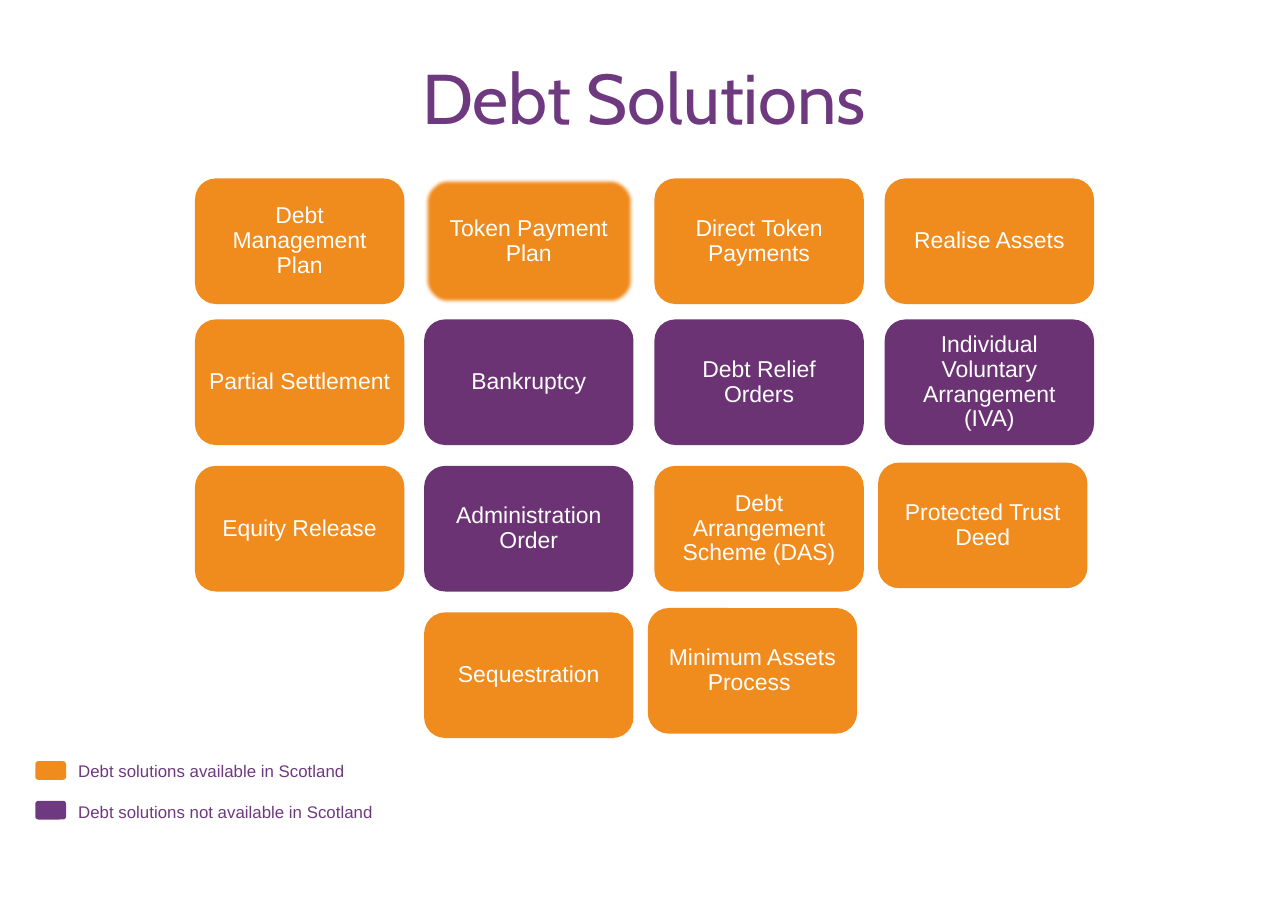
"""Build the Debt Solutions slide: a grid of options and a colour key."""
import pptx
import pptx.dml.color
import pptx.enum.shapes
import pptx.enum.text
import pptx.oxml.ns
import pptx.oxml.xmlchemy
import pptx.util

ORANGE = pptx.dml.color.RGBColor(0xF0, 0x8B, 0x1E)
PURPLE = pptx.dml.color.RGBColor(0x6B, 0x33, 0x74)
VIOLET = pptx.dml.color.RGBColor(0x6F, 0x39, 0x7F)
WHITE = pptx.dml.color.RGBColor(0xFF, 0xFF, 0xFF)
SCALE = 9144
ALIGN = pptx.enum.text.PP_ALIGN
ANCHOR = pptx.enum.text.MSO_ANCHOR

COLS = (177, 385, 594, 803)
ROWS = (162, 290, 423, 556)
TILES = (
    (0, 0, "Debt Management Plan", ORANGE),
    (0, 1, "Token Payment Plan", ORANGE),
    (0, 2, "Direct Token Payments", ORANGE),
    (0, 3, "Realise Assets", ORANGE),
    (1, 0, "Partial Settlement", ORANGE),
    (1, 1, "Bankruptcy", PURPLE),
    (1, 2, "Debt Relief Orders", PURPLE),
    (1, 3, "Individual Voluntary Arrangement (IVA)", PURPLE),
    (2, 0, "Equity Release", ORANGE),
    (2, 1, "Administration Order", PURPLE),
    (2, 2, "Debt Arrangement Scheme (DAS)", ORANGE),
    (2, 3, "Protected Trust Deed", ORANGE),
    (3, 1, "Sequestration", ORANGE),
    (3, 2, "Minimum Assets Process ", ORANGE),
)
SHIFTS = {(2, 3): (-6, -3), (3, 2): (-6, -4)}
SOFT = (0, 1)


def px(*sizes):
    return [pptx.util.Emu(size * SCALE) for size in sizes]


class Page:
    def __init__(self, slide, font):
        self.slide = slide
        self.font = font

    def frame(self, shape, side, anchor):
        frame = shape.text_frame
        frame.word_wrap = True
        frame.auto_size = pptx.enum.text.MSO_AUTO_SIZE.NONE
        frame.vertical_anchor = anchor
        frame.margin_left, frame.margin_right = px(side, side)
        frame.margin_top, frame.margin_bottom = px(6, 6)
        return frame

    def style(self, para, size, color, align, font=None):
        para.alignment = align
        for run in para.runs:
            run.font.name = font or self.font
            run.font.size = pptx.util.Pt(size)
            run.font.color.rgb = color

    def title(self, text, box):
        shape = self.slide.shapes.title
        shape.left, shape.top, shape.width, shape.height = px(*box)
        frame = self.frame(shape, 11, ANCHOR.TOP)
        frame.text = text
        self.style(frame.paragraphs[0], 46, VIOLET, ALIGN.CENTER, "Cabin")

    def block(self, box, color):
        kind = pptx.enum.shapes.MSO_SHAPE.ROUNDED_RECTANGLE
        shape = self.slide.shapes.add_shape(kind, *px(*box))
        shape.shadow.inherit = False
        shape.fill.solid()
        shape.fill.fore_color.rgb = color
        shape.line.fill.background()
        return shape

    def tile(self, text, box, color):
        shape = self.block(box, color)
        frame = self.frame(shape, 6, ANCHOR.MIDDLE)
        frame.text = text
        para = frame.paragraphs[0]
        para.line_spacing = 0.9
        self.style(para, 15, WHITE, ALIGN.CENTER)
        return shape

    def soften(self, shape, points):
        edge = pptx.oxml.xmlchemy.OxmlElement("a:softEdge")
        edge.set("rad", str(pptx.util.Pt(points)))
        shape._element.spPr.find(pptx.oxml.ns.qn("a:effectLst")).append(edge)

    def labels(self, lines, box):
        shape = self.slide.shapes.add_textbox(*px(*box))
        frame = self.frame(shape, 11, ANCHOR.TOP)
        frame.text = "\n".join(lines)
        for para in frame.paragraphs:
            self.style(para, 11, VIOLET, ALIGN.LEFT)
        for para in frame.paragraphs[1:]:
            para.space_before = pptx.util.Pt(13)


def main():
    deck = pptx.Presentation()
    deck.slide_width, deck.slide_height = px(1169, 827)
    page = Page(deck.slides.add_slide(deck.slide_layouts[5]), "Arial")
    page.title("Debt Solutions", (297, 43, 575, 89))
    for row, col, text, color in TILES:
        right, down = SHIFTS.get((row, col), (0, 0))
        box = (COLS[col] + right, ROWS[row] + down, 190, 114)
        tile = page.tile(text, box, color)
        if (row, col) == SOFT:
            page.soften(tile, 2.5)
    for top, color in ((691, ORANGE), (727, VIOLET)):
        page.block((32, top, 28, 17), color)
    page.labels(
        ("Debt solutions available in Scotland",
         "Debt solutions not available in Scotland"),
        (60, 685, 313, 67),
    )
    deck.save("out.pptx")


if __name__ == "__main__":
    main()
